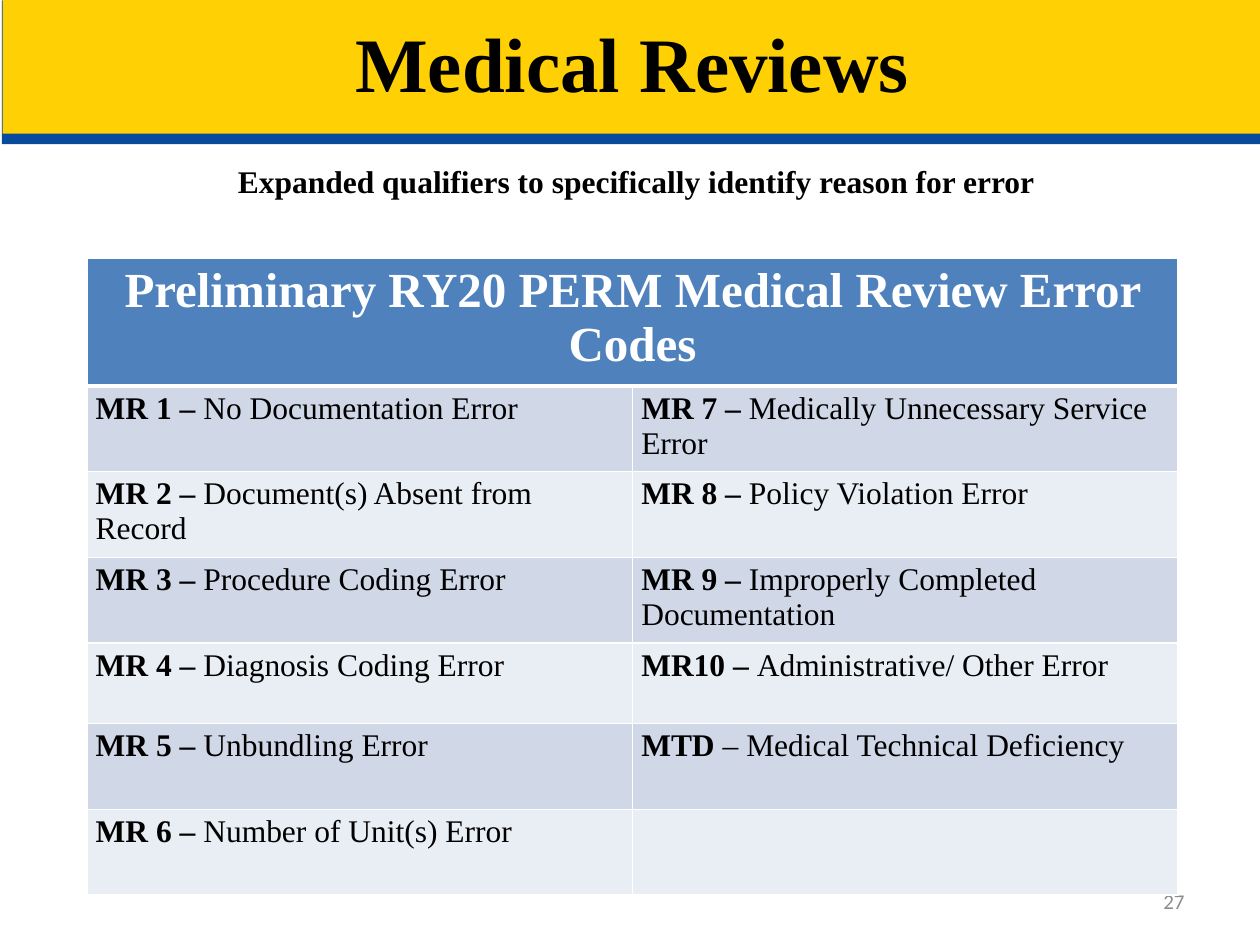
from typing import NamedTuple

from lxml import etree
from pptx import Presentation
from pptx import util as u
from pptx.dml.color import RGBColor
from pptx.enum import text
from pptx.oxml import parse_xml
from pptx.oxml.ns import qn

A_NS = 'xmlns:a="http://schemas.openxmlformats.org/drawingml/2006/main"'
SERIF = "Times New Roman"
BLACK, WHITE = "000000", "FFFFFF"
BANDS = ("D0D8E8", "E9EDF4")
ROW_HEIGHTS = (0.92, 0.68, 0.68, 0.64, 0.64, 0.68, 0.68)
COLUMN_WIDTH = 4.33


class ErrorCode(NamedTuple):
    code: str
    meaning: str


CODE_COLUMNS = (
    (
        ErrorCode("MR 1 – ", "No Documentation Error"),
        ErrorCode("MR 2 – ", "Document(s) Absent from Record"),
        ErrorCode("MR 3 – ", "Procedure Coding Error"),
        ErrorCode("MR 4 – ", "Diagnosis Coding Error"),
        ErrorCode("MR 5 – ", "Unbundling Error"),
        ErrorCode("MR 6 – ", "Number of Unit(s) Error"),
    ),
    (
        ErrorCode("MR 7 – ", "Medically Unnecessary Service Error"),
        ErrorCode("MR 8 – ", "Policy Violation Error"),
        ErrorCode("MR 9 – ", "Improperly Completed Documentation"),
        ErrorCode("MR10 – ", "Administrative/ Other Error"),
        ErrorCode("MTD ", "– Medical Technical Deficiency"),
    ),
)


def paint(fill, color: str) -> None:
    fill.solid()
    fill.fore_color.rgb = RGBColor.from_string(color)


def write(frame, words: str, *, size: float = 18, font: str = SERIF,
          color: str = BLACK, bold: bool = False, align=None) -> None:
    """Append a formatted run to the first paragraph of a text frame."""
    paragraph = frame.paragraphs[0]
    if align is not None:
        paragraph.alignment = align
    run = paragraph.add_run()
    run.text = words
    run.font.size, run.font.name, run.font.bold = u.Pt(size), font, bold
    run.font.color.rgb = RGBColor.from_string(color)


def add_text_box(slide, left: float, top: float, width: float, height: float):
    frame = slide.shapes.add_textbox(*map(u.Inches, (left, top, width, height))).text_frame
    frame.word_wrap = True
    return frame


def style_cell(cell, color: str, bottom: float = 1) -> None:
    """Fill a cell and give it white borders, in points."""
    paint(cell.fill, color)
    cell.margin_left = cell.margin_right = u.Inches(0.07)
    cell.margin_top = cell.margin_bottom = u.Inches(0.04)
    properties = cell._tc.get_or_add_tcPr()
    widths = {"lnL": 1, "lnR": 1, "lnT": 1, "lnB": bottom}
    for position, (side, width) in enumerate(widths.items()):
        properties.insert(position, parse_xml(
            f'<a:{side} {A_NS} w="{u.Pt(width)}"><a:solidFill>'
            f'<a:srgbClr val="{WHITE}"/></a:solidFill></a:{side}>'))


def add_title(slide) -> None:
    banner = slide.shapes.title
    banner.left, banner.top, banner.width, banner.height = map(
        u.Inches, (0.02, -0.08, 10, 1.14))
    paint(banner.fill, "FFD004")
    effects = etree.SubElement(banner._element.spPr, qn("a:effectLst"))
    effects.append(parse_xml(
        f'<a:outerShdw {A_NS} blurRad="0" dist="{u.Pt(6)}" dir="{94 * 60000}" '
        'algn="t" rotWithShape="0"><a:srgbClr val="084A9C"/></a:outerShdw>'))
    frame = banner.text_frame
    frame.auto_size = text.MSO_AUTO_SIZE.NONE
    frame.vertical_anchor = text.MSO_ANCHOR.MIDDLE
    write(frame, "Medical Reviews", size=44, bold=True, align=text.PP_ALIGN.CENTER)


def add_code_table(slide) -> None:
    columns = len(CODE_COLUMNS)
    table = slide.shapes.add_table(
        len(ROW_HEIGHTS), columns, u.Inches(0.69), u.Inches(2.05),
        u.Inches(columns * COLUMN_WIDTH), u.Inches(sum(ROW_HEIGHTS))).table
    for column in table.columns:
        column.width = u.Inches(COLUMN_WIDTH)
    for row, height in zip(table.rows, ROW_HEIGHTS):
        row.height = u.Inches(height)

    for column in range(columns):
        style_cell(table.cell(0, column), "4F81BD", bottom=3)
        for row in range(1, len(ROW_HEIGHTS)):
            style_cell(table.cell(row, column), BANDS[(row - 1) % 2])
    heading = table.cell(0, 0)
    heading.merge(table.cell(0, columns - 1))
    write(heading.text_frame, "Preliminary RY20 PERM Medical Review Error Codes",
          size=28, color=WHITE, bold=True, align=text.PP_ALIGN.CENTER)

    for column, codes in enumerate(CODE_COLUMNS):
        for row, entry in enumerate(codes, start=1):
            frame = table.cell(row, column).text_frame
            write(frame, entry.code, bold=True)
            write(frame, entry.meaning)


def main() -> None:
    deck = Presentation()
    deck.slide_width, deck.slide_height = u.Inches(10), u.Inches(7.5)
    slide = deck.slides.add_slide(deck.slide_layouts[5])
    add_title(slide)

    page_number = add_text_box(slide, 7.17, 6.95, 2.33, 0.4)
    page_number.vertical_anchor = text.MSO_ANCHOR.MIDDLE
    write(page_number, "27", size=12, font="Calibri", color="8C8C8C",
          align=text.PP_ALIGN.RIGHT)

    add_code_table(slide)

    subtitle = add_text_box(slide, 0.02, 1.24, 10, 0.4)
    write(subtitle, " Expanded qualifiers to specifically identify reason for error",
          bold=True, align=text.PP_ALIGN.CENTER)
    deck.save("out.pptx")


if __name__ == "__main__":
    main()
